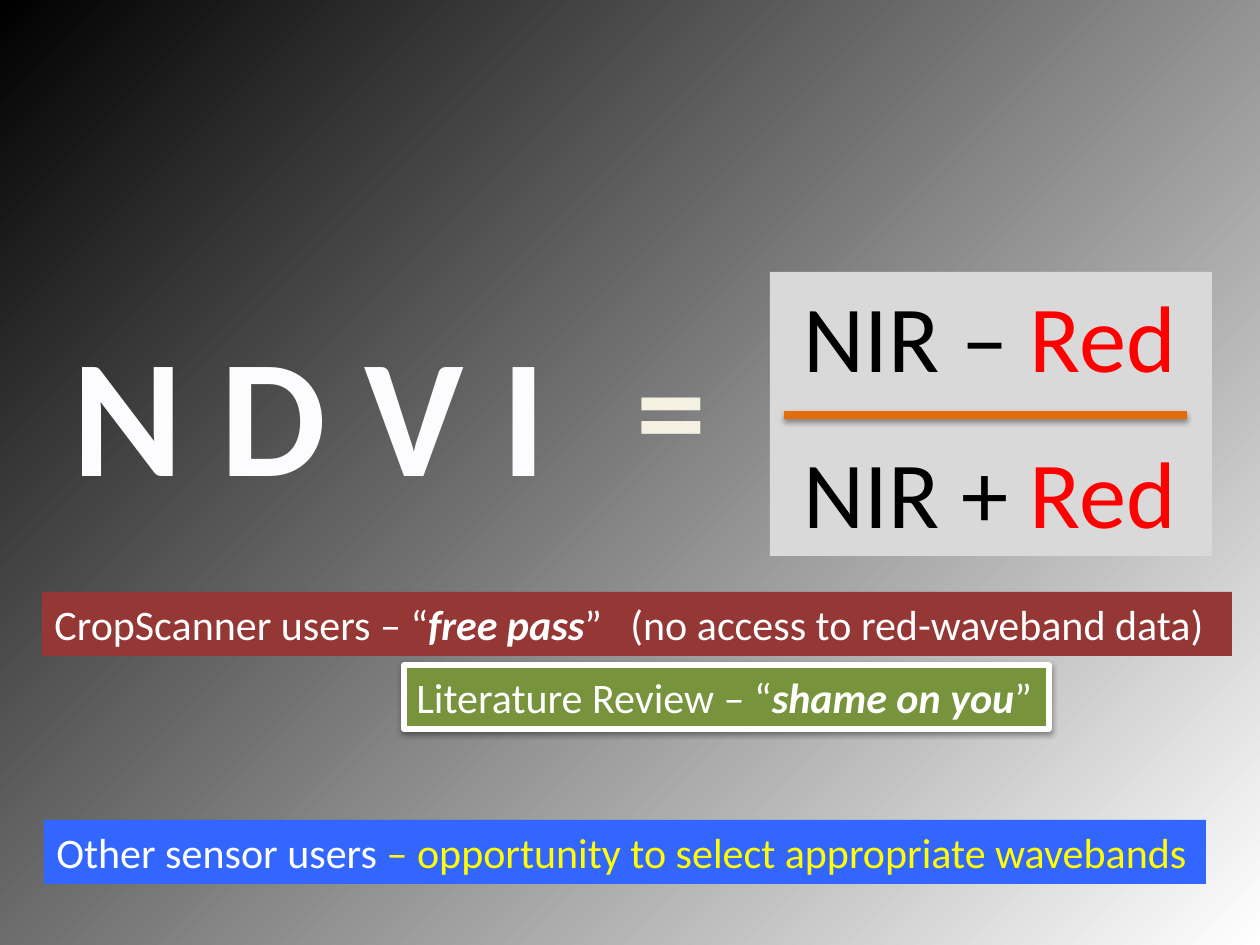
from lxml import etree
from pptx import Presentation
from pptx import util as u
from pptx.dml.color import RGBColor
from pptx.enum import shapes, text
from pptx.oxml import parse_xml
from pptx.oxml.ns import nsdecls, qn

PX = 914400 / 126
COLORS = {
    "white": "FFFFFF", "black": "000000", "red": "FF0000", "yellow": "FFFF00",
    "name": "FCFCFF", "name edge": "1E7CEE", "equals": "F4F1E3", "equals edge": "054697",
    "formula": "D9D9D9", "bar": "E46C0A", "maroon": "953735", "olive": "77933C",
    "blue": "3366FF",
}
EMPHASIS = {"bold": True, "italic": True}


def px(*lengths):
    return [u.Emu(round(length * PX)) for length in lengths]


def rgb(name):
    return RGBColor.from_string(COLORS[name])


def cast_shadow(shape):
    """Add the soft downward shadow, replacing any effect list."""
    properties = shape._element.spPr
    for effects in properties.findall(qn("a:effectLst")):
        properties.remove(effects)
    properties.append(parse_xml(
        f'<a:effectLst {nsdecls("a")}><a:outerShdw blurRad="40000" dist="20000" '
        f'dir="5400000" rotWithShape="0"><a:srgbClr val="{COLORS["black"]}">'
        '<a:alpha val="38000"/></a:srgbClr></a:outerShdw></a:effectLst>'))


class SlideBuilder:
    font = "Calibri"

    def __init__(self, slide):
        self.slide = slide

    def background(self, inner, outer):
        """Radial gradient centred on the bottom right corner."""
        fill = self.slide.background.fill
        fill.gradient()
        for stop, color, position in zip(fill.gradient_stops, (inner, outer), (0, 1)):
            stop.color.rgb = rgb(color)
            stop.position = position
        gradient = self.slide.element.find(".//" + qn("a:gradFill"))
        gradient.remove(gradient.find(qn("a:lin")))
        gradient.append(parse_xml(
            f'<a:path {nsdecls("a")} path="circle">'
            '<a:fillToRect l="100000" t="100000"/></a:path>'))

    def set_text(self, box, paragraphs, size, wrap=False):
        """Each paragraph is a list of (words, colour, options) spans."""
        frame = box.text_frame
        frame.word_wrap = wrap
        frame.auto_size = text.MSO_AUTO_SIZE.SHAPE_TO_FIT_TEXT
        frame.vertical_anchor = text.MSO_ANCHOR.TOP
        for index, spans in enumerate(paragraphs):
            para = frame.paragraphs[0] if index == 0 else frame.add_paragraph()
            para.alignment = text.PP_ALIGN.LEFT
            para.font.name, para.font.size = self.font, u.Pt(size)
            for words, color, options in spans:
                span = para.add_run()
                span.text = words
                span.font.color.rgb = rgb(color)
                span.font.bold = options.get("bold")
                span.font.italic = options.get("italic")
                if "spacing" in options:
                    span.font._element.set("spc", str(options["spacing"]))
        return frame

    def symbol(self, bounds, words, size, color, edge, width, alpha):
        """Large bold text with outlined letters."""
        box = self.slide.shapes.add_textbox(*px(*bounds))
        frame = self.set_text(box, [[(words, color, {"bold": True})]], size)
        outline = parse_xml(
            f'<a:ln {nsdecls("a")} w="{width}"><a:solidFill>'
            f'<a:srgbClr val="{COLORS[edge]}"/></a:solidFill></a:ln>')
        if alpha < 100:
            etree.SubElement(outline[0][0], qn("a:alpha"), val=str(alpha * 1000))
        frame.paragraphs[0].runs[0].font._element.insert(0, outline)
        return frame

    def panel(self, bounds, fill, paragraphs, size=24, wrap=False):
        box = self.slide.shapes.add_shape(shapes.MSO_SHAPE.RECTANGLE, *px(*bounds))
        box.shadow.inherit = False
        box.fill.solid()
        box.fill.fore_color.rgb = rgb(fill)
        box.line.fill.background()
        self.set_text(box, paragraphs, size, wrap)
        return box

    def bar(self, left, right, y, color, width):
        line = self.slide.shapes.add_connector(
            shapes.MSO_CONNECTOR.STRAIGHT, *px(left, y, right, y))
        line.line.color.rgb = rgb(color)
        line.line.width = u.Pt(width)
        cast_shadow(line)


def main():
    deck = Presentation()
    deck.slide_width, deck.slide_height = px(1260, 945)
    page = SlideBuilder(deck.slides.add_slide(deck.slide_layouts[6]))
    page.background("white", "black")

    name = page.symbol((57, 302, 505, 217), "N D V I", 96, "name", "name edge", 900, 55)
    name.paragraphs[0].alignment = text.PP_ALIGN.CENTER

    formula = page.panel(
        (770, 272, 442, 284), "formula",
        [[(part, "black", {}), ("Red", "red", {})] for part in ("NIR – ", "NIR + ")],
        size=54, wrap=True)
    formula.text_frame.margin_left = px(34)[0]
    formula.text_frame.paragraphs[1].space_before = u.Pt(24)

    page.symbol((624, 314, 96, 183), "=", 80, "equals", "equals edge", 12700, 100)
    page.bar(784, 1187, 415, "bar", 4.5)

    page.panel((42, 592, 1190, 64), "maroon", [[
        ("CropScanner users – “", "white", {}),
        ("free pass", "white", EMPHASIS),
        ("”", "white", {}),
        (" ", "white", {"spacing": 1085}),
        ("(no access to red-waveband data)", "white", {})]])
    review = page.panel((404, 665, 645, 64), "olive", [[
        ("Literature Review – “", "white", {}),
        ("shame on you", "white", EMPHASIS),
        ("”", "white", {})]])
    review.line.color.rgb = rgb("white")
    review.line.width = u.Pt(3)
    cast_shadow(review)
    page.panel((44, 820, 1162, 64), "blue", [[
        ("Other sensor users ", "white", {}),
        ("– opportunity to select appropriate wavebands", "yellow", {})]])

    deck.save("out.pptx")


if __name__ == "__main__":
    main()
